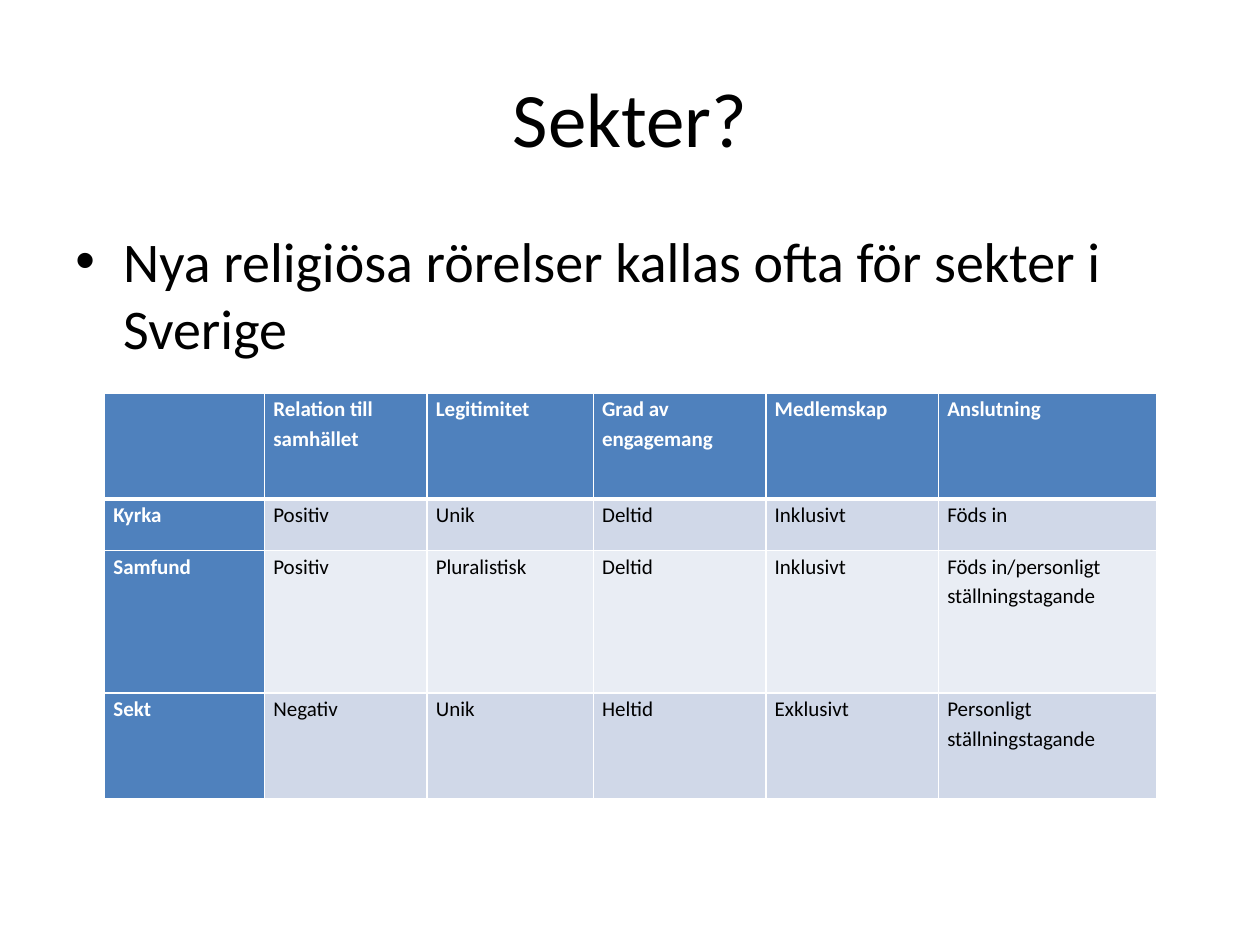
from lxml import etree
from pptx import Presentation
from pptx.dml.color import RGBColor
from pptx.enum.text import MSO_ANCHOR, PP_ALIGN
from pptx.oxml.ns import qn
from pptx.util import Inches, Pt

FONT = "Calibri"
BLACK = RGBColor(0x00, 0x00, 0x00)
WHITE = RGBColor(0xFF, 0xFF, 0xFF)
HEADER_BLUE = RGBColor(0x4F, 0x81, 0xBD)
BANDS = [RGBColor(0xD0, 0xD8, 0xE8), RGBColor(0xE9, 0xED, 0xF4)]

COL_WIDTHS = [1.27, 1.29, 1.32, 1.37, 1.37, 1.73]
ROW_HEIGHTS = [0.84, 0.41, 1.13, 0.84]
ROWS = [
    ["", "Relation till samhället", "Legitimitet", "Grad av engagemang",
     "Medlemskap", "Anslutning"],
    ["Kyrka", "Positiv", "Unik", "Deltid", "Inklusivt", "Föds in"],
    ["Samfund", "Positiv", "Pluralistisk", "Deltid", "Inklusivt",
     "Föds in/personligt ställningstagande"],
    ["Sekt", "Negativ", "Unik", "Heltid", "Exklusivt",
     "Personligt ställningstagande"],
]


def set_font(p, size, color, bold=False):
    p.font.name = FONT
    p.font.size = Pt(size)
    p.font.color.rgb = color
    p.font.bold = bold


def add_text(slide, box, text, size):
    tf = slide.shapes.add_textbox(*map(Inches, box)).text_frame
    tf.word_wrap = True
    p = tf.paragraphs[0]
    p.text = text
    set_font(p, size, BLACK)
    return tf, p


def add_title(slide, box, text):
    tf, p = add_text(slide, box, text, 44)
    tf.vertical_anchor = MSO_ANCHOR.MIDDLE
    p.alignment = PP_ALIGN.CENTER


def add_bullet(slide, box, text):
    _, p = add_text(slide, box, text, 32)
    pPr = p._p.get_or_add_pPr()
    # Hanging indent, relative spacing and bullet, in schema order
    pPr.set("marL", str(Inches(0.38)))
    pPr.set("indent", str(Inches(-0.38)))
    spacing = etree.Element(qn("a:spcBef"))
    etree.SubElement(spacing, qn("a:spcPct"), val="20000")
    pPr.insert(0, spacing)
    bullet_font = etree.Element(qn("a:buFont"), typeface="Arial")
    bullet = etree.Element(qn("a:buChar"), char="•")
    spacing.addnext(bullet_font)
    bullet_font.addnext(bullet)


def set_borders(cell, top, bottom):
    tcPr = cell._tc.get_or_add_tcPr()
    for side, width in (("L", 1), ("R", 1), ("T", top), ("B", bottom)):
        ln = etree.SubElement(tcPr, qn(f"a:ln{side}"), w=str(Pt(width)))
        fill = etree.SubElement(ln, qn("a:solidFill"))
        etree.SubElement(fill, qn("a:srgbClr"), val=str(WHITE))


def add_comparison_table(slide, box):
    table = slide.shapes.add_table(
        len(ROWS), len(COL_WIDTHS), *map(Inches, box)).table
    table.first_col = True
    for column, width in zip(table.columns, COL_WIDTHS):
        column.width = Inches(width)
    for row, height in zip(table.rows, ROW_HEIGHTS):
        row.height = Inches(height)

    for r, values in enumerate(ROWS):
        for c, value in enumerate(values):
            cell = table.cell(r, c)
            is_header = r == 0 or c == 0
            # The rule under the header row is thicker
            set_borders(cell, top=3 if r == 1 else 1, bottom=3 if r == 0 else 1)
            cell.fill.solid()
            cell.fill.fore_color.rgb = HEADER_BLUE if is_header else BANDS[(r - 1) % 2]
            cell.margin_left = cell.margin_right = Inches(0.07)
            cell.margin_top = cell.margin_bottom = 0
            p = cell.text_frame.paragraphs[0]
            p.text = value
            p.line_spacing = 1.15
            set_font(p, 12, WHITE if is_header else BLACK, is_header)


def main():
    prs = Presentation()
    prs.slide_width, prs.slide_height = Inches(10), Inches(7.5)
    slide = prs.slides.add_slide(prs.slide_layouts[6])
    add_title(slide, (0.5, 0.3, 9, 1.25), "Sekter?")
    add_bullet(slide, (0.5, 1.75, 9, 4.95),
               "Nya religiösa rörelser kallas ofta för sekter i Sverige")
    add_comparison_table(slide, (0.83, 3.12, 8.35, 3.22))
    prs.save("out.pptx")


if __name__ == "__main__":
    main()
